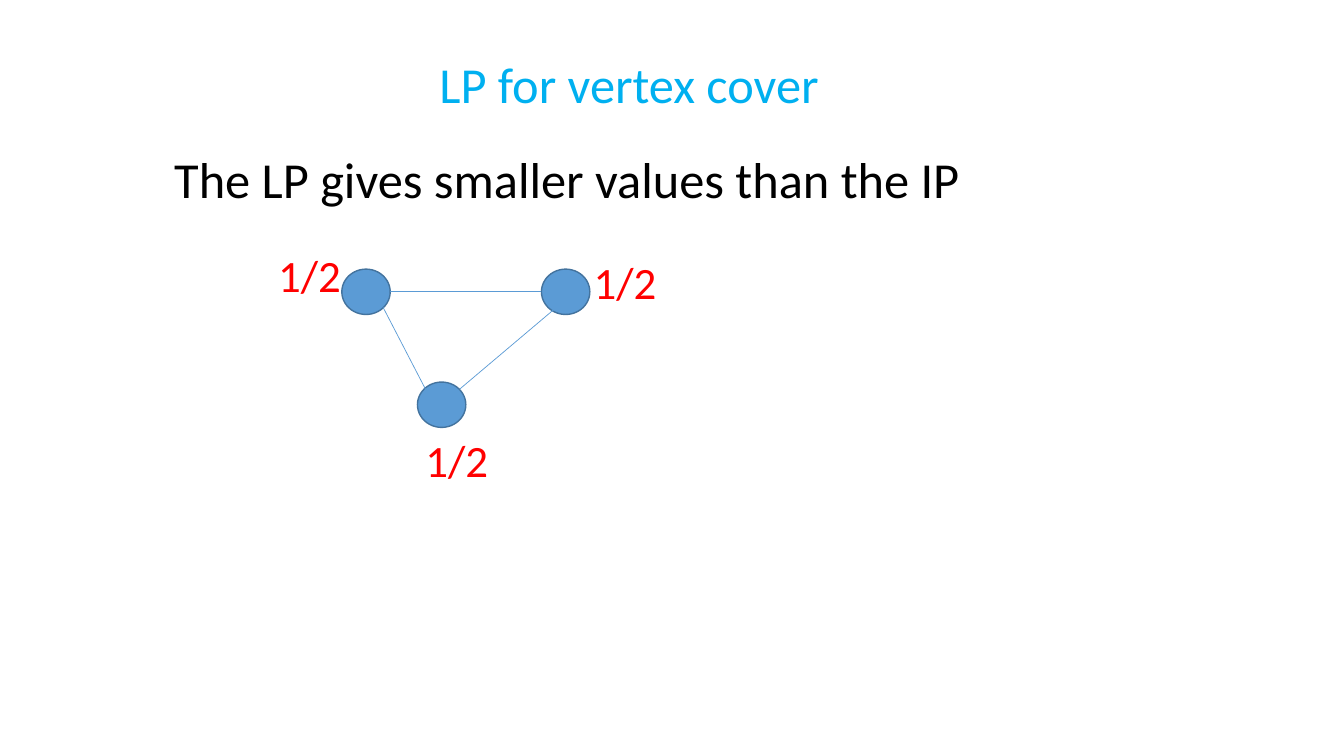
import pptx
import pptx.util
import pptx.dml.color
import pptx.enum.shapes
import pptx.enum.text
import pptx.oxml.ns
from lxml import etree

Inches = pptx.util.Inches
Pt = pptx.util.Pt
RGBColor = pptx.dml.color.RGBColor
PP_ALIGN = pptx.enum.text.PP_ALIGN

BLACK = RGBColor(0x00, 0x00, 0x00)
SKY = RGBColor(0x00, 0xB0, 0xF0)
RED = RGBColor(0xFF, 0x00, 0x00)
BLUE = RGBColor(0x5B, 0x9B, 0xD5)
DARK_BLUE = RGBColor(0x43, 0x73, 0x9E)

NODE_W, NODE_H = 0.48, 0.45
NODES = [(3.39, 2.67), (5.37, 2.67), (4.14, 3.79)]
EDGES = [
    (3.87, 2.89, 5.37, 2.89),
    (3.8, 3.05, 4.22, 3.86),
    (4.56, 3.86, 5.66, 2.93),
]
LABELS = [(2.66, 2.41), (5.79, 2.48), (4.12, 4.24)]


def add_text(slide, text, left, top, width, height, *, size, color,
             align=PP_ALIGN.LEFT, line_spacing=1.0):
    sp = slide.shapes.add_textbox(
        Inches(left), Inches(top), Inches(width), Inches(height))
    tf = sp.text_frame
    tf.word_wrap = True
    p = tf.paragraphs[0]
    p.alignment = align
    p.line_spacing = line_spacing
    r = p.add_run()
    r.text = text
    r.font.name = "Calibri"
    r.font.size = Pt(size)
    r.font.color.rgb = color


def add_node(slide, left, top):
    sp = slide.shapes.add_shape(
        pptx.enum.shapes.MSO_SHAPE.OVAL,
        Inches(left), Inches(top), Inches(NODE_W), Inches(NODE_H))
    sp.shadow.inherit = False
    sp.fill.solid()
    sp.fill.fore_color.rgb = BLUE
    sp.line.color.rgb = DARK_BLUE
    sp.line.width = Pt(1)


def add_edge(slide, x1, y1, x2, y2):
    edge = slide.shapes.add_connector(
        pptx.enum.shapes.MSO_CONNECTOR.STRAIGHT,
        Inches(x1), Inches(y1), Inches(x2), Inches(y2))
    edge.line.color.rgb = BLUE
    edge.line.width = Pt(0.5)
    etree.SubElement(edge._element.spPr, pptx.oxml.ns.qn("a:effectLst"))


def main():
    prs = pptx.Presentation()
    prs.slide_width = Inches(13.33)
    prs.slide_height = Inches(7.5)
    slide = prs.slides.add_slide(prs.slide_layouts[6])

    add_text(slide, "LP for vertex cover", 1.24, 0.55, 10, 0.68,
             size=36, color=SKY, align=PP_ALIGN.CENTER, line_spacing=0.9)
    add_text(slide, "The LP gives smaller values than the IP", 1.63, 1.49, 10, 0.68,
             size=36, color=BLACK, line_spacing=0.9)

    for node in NODES:
        add_node(slide, *node)
    for edge in EDGES:
        add_edge(slide, *edge)
    for left, top in LABELS:
        add_text(slide, "1/2", left, top, 1.01, 0.64, size=32, color=RED)

    prs.save("out.pptx")


if __name__ == "__main__":
    main()
